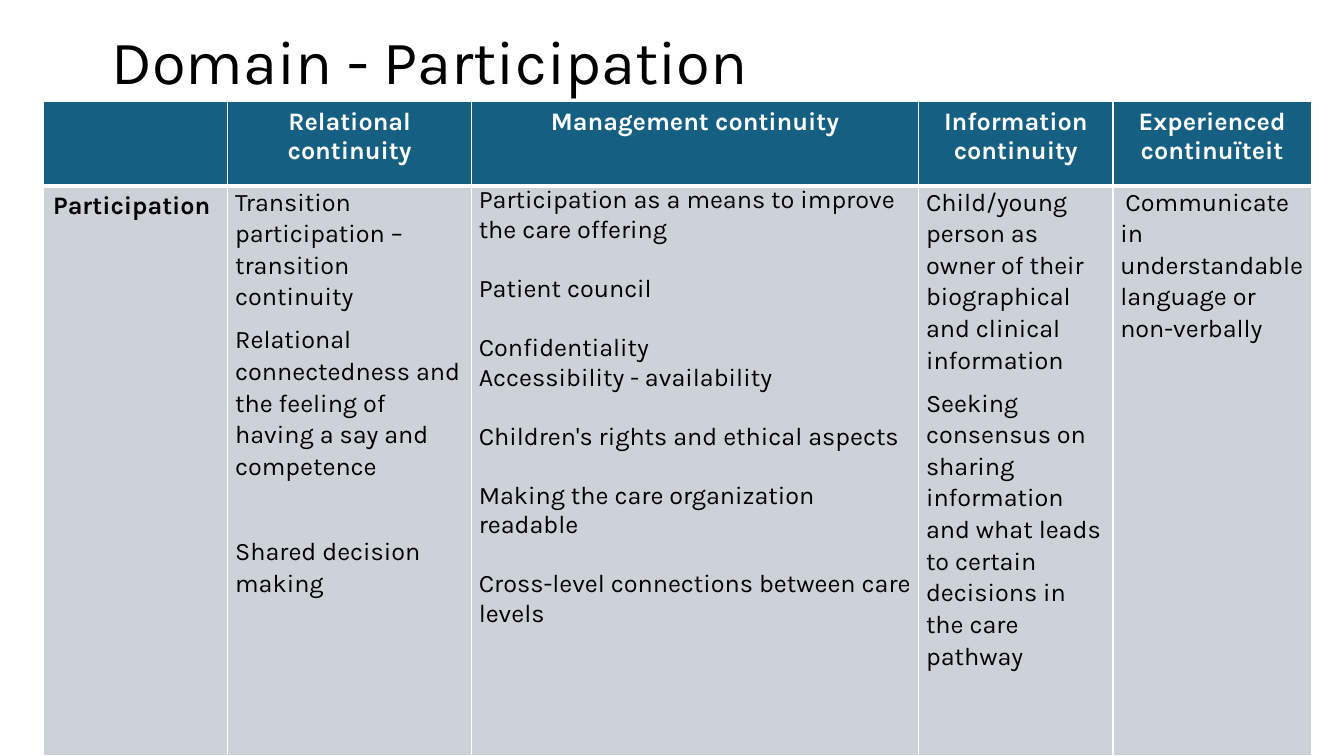
from lxml import etree
from pptx import Presentation
from pptx.dml.color import RGBColor
from pptx.enum.text import MSO_ANCHOR, PP_ALIGN
from pptx.oxml.ns import qn
from pptx.util import Pt

PX = 9525
FONT = "Karla"
CENTER = PP_ALIGN.CENTER
LEFT = PP_ALIGN.LEFT
MIDDLE = MSO_ANCHOR.MIDDLE
COLORS = {"black": "000000", "white": "FFFFFF", "header": "156082", "body": "CCD2D8"}

COLUMN_WIDTHS = [176, 232, 426, 185, 189]
ROW_HEIGHTS = [80, 543]
HEADERS = [
    "",
    "Relational continuity",
    "Management continuity",
    "Information continuity",
    "Experienced continuïteit",
]
# Each body paragraph is its text and the space before it in points.
BODY = [
    [("Participation", 0)],
    [
        ("Transition participation – transition continuity", 0),
        ("Relational connectedness and the feeling of having a say and competence", 0),
        ("Shared decision making", 30.5),
    ],
    [
        ("Participation as a means to improve the care offering", 0),
        ("Patient council", 21),
        ("Confidentiality", 21),
        ("Accessibility - availability", 0),
        ("Children's rights and ethical aspects", 21),
        ("Making the care organization readable", 21),
        ("Cross-level connections between care levels", 21),
    ],
    [
        ("Child/young person as owner of their biographical and clinical information", 0),
        ("Seeking consensus on sharing information and what leads to certain "
         "decisions in the care pathway", 0),
    ],
    [("Communicate in understandable language or non-verbally", 0)],
]
SPACED_COLUMNS = (1, 3, 4)


def add_run(paragraph, text, size, color, bold=False):
    run = paragraph.add_run()
    run.text = text
    run.font.name = FONT
    run.font.size = Pt(size)
    run.font.bold = bold
    run.font.color.rgb = RGBColor.from_string(COLORS[color])


def style_cell(cell, fill, top, bottom):
    """Fill a cell and give it white borders; top and bottom are widths in points."""
    cell.fill.solid()
    cell.fill.fore_color.rgb = RGBColor.from_string(COLORS[fill])
    properties = cell._tc.get_or_add_tcPr()
    widths = {"a:lnL": 1, "a:lnR": 1, "a:lnT": top, "a:lnB": bottom}
    for index, (tag, width) in enumerate(widths.items()):
        line = etree.Element(qn(tag), w=str(Pt(width)))
        solid = etree.SubElement(line, qn("a:solidFill"))
        etree.SubElement(solid, qn("a:srgbClr"), val=COLORS["white"])
        properties.insert(index, line)


presentation = Presentation()
presentation.slide_width = 1280 * PX
presentation.slide_height = 720 * PX
slide = presentation.slides.add_slide(presentation.slide_layouts[6])

# Title
title = slide.shapes.add_textbox(97 * PX, 0, 1056 * PX, 123 * PX)
title.text_frame.word_wrap = True
title.text_frame.vertical_anchor = MIDDLE
title_paragraph = title.text_frame.paragraphs[0]
title_paragraph.line_spacing = 0.9
add_run(title_paragraph, "Domain - Participation", 44, "black")

# Table grid
table = slide.shapes.add_table(
    len(ROW_HEIGHTS), len(COLUMN_WIDTHS), 41 * PX, 97 * PX,
    sum(COLUMN_WIDTHS) * PX, sum(ROW_HEIGHTS) * PX,
).table
table.horz_banding = False
for column, width in zip(table.columns, COLUMN_WIDTHS):
    column.width = width * PX
for row, height in zip(table.rows, ROW_HEIGHTS):
    row.height = height * PX

# Header row
for column_index, header in enumerate(HEADERS):
    cell = table.cell(0, column_index)
    style_cell(cell, "header", 1, 3)
    if header:
        paragraph = cell.text_frame.paragraphs[0]
        paragraph.alignment = CENTER
        add_run(paragraph, header, 18, "white", bold=True)

# Body row
for column_index, entries in enumerate(BODY):
    cell = table.cell(1, column_index)
    style_cell(cell, "body", 3, 1)
    is_label = column_index == 0
    if not is_label:
        cell.margin_left = cell.margin_right = 7 * PX
        cell.margin_top = cell.margin_bottom = 0
    for entry_index, (text, space_before) in enumerate(entries):
        frame = cell.text_frame
        paragraph = frame.add_paragraph() if entry_index else frame.paragraphs[0]
        paragraph.alignment = LEFT
        if space_before:
            paragraph.space_before = Pt(space_before)
        if column_index in SPACED_COLUMNS:
            paragraph.line_spacing = 1.07
            paragraph.space_after = Pt(8)
        add_run(paragraph, text, 18, "black", bold=is_label)

# The last column starts with a small first-line indent
experienced = table.cell(1, 4).text_frame.paragraphs[0]
experienced._p.get_or_add_pPr().set("indent", str(5 * PX))

presentation.save("out.pptx")
